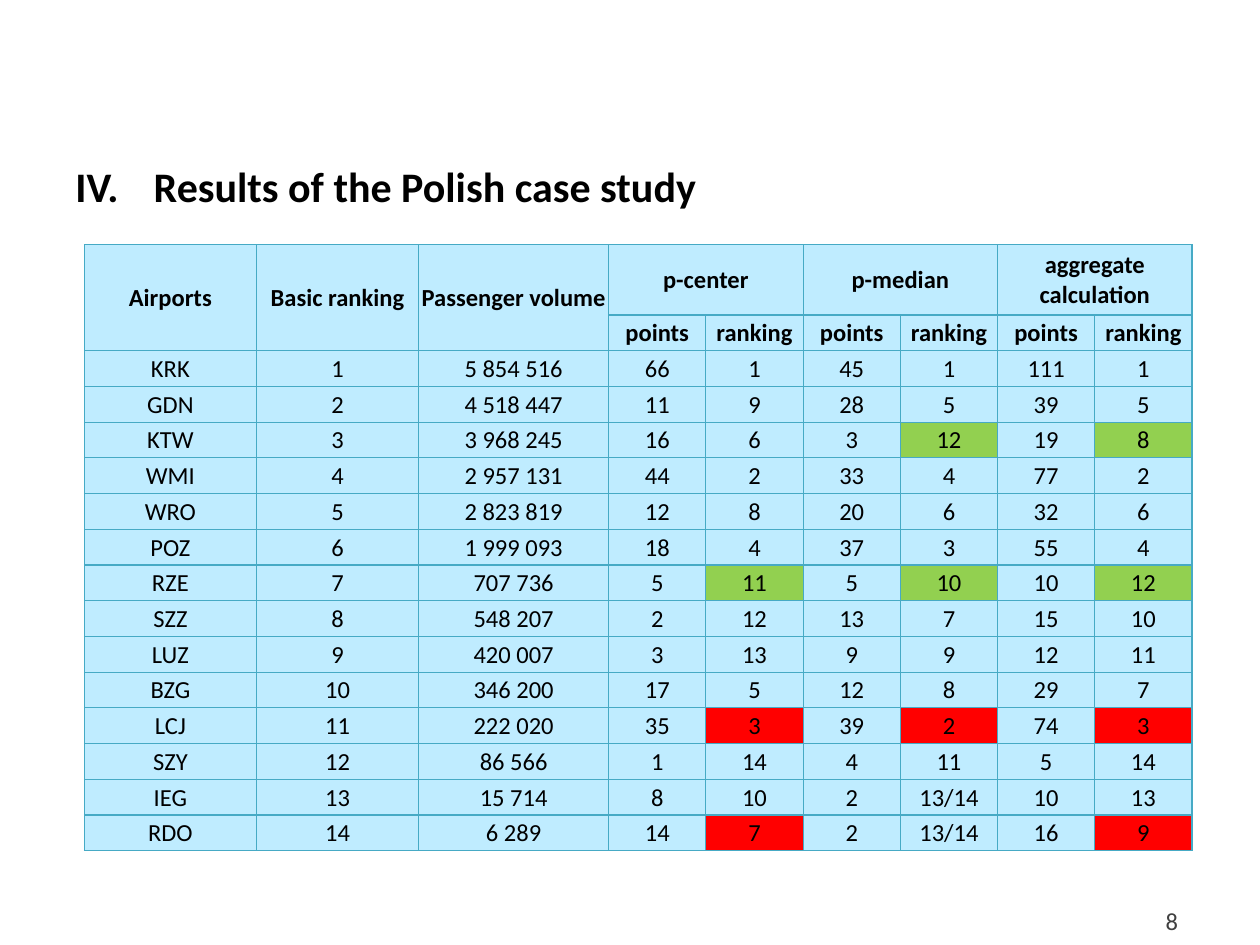
import pptx
import pptx.dml.color
import pptx.enum.text
import pptx.oxml.ns
import pptx.util
from lxml import etree

Cm = pptx.util.Cm
Pt = pptx.util.Pt
RGBColor = pptx.dml.color.RGBColor
Align = pptx.enum.text.PP_ALIGN
Anchor = pptx.enum.text.MSO_ANCHOR
qn = pptx.oxml.ns.qn

BLACK = RGBColor(0x00, 0x00, 0x00)
GREY = RGBColor(0x40, 0x40, 0x40)
PALE_BLUE = RGBColor(0xBF, 0xEC, 0xFF)
TEAL = RGBColor(0x46, 0xAA, 0xC5)
GREEN = RGBColor(0x92, 0xD0, 0x50)
RED = RGBColor(0xFF, 0x00, 0x00)

COLUMN_WIDTHS = [3.47, 3.27, 3.83] + [1.96] * 6
HEADER_HEIGHT, ROW_HEIGHT = 1.42, 0.72
HEADER_ROWS = 2
ROWS = [
    ["Airports", "Basic ranking", "Passenger volume",
     "p-center", "", "p-median", "", "aggregate calculation", ""],
    ["", "", ""] + ["points", "ranking"] * 3,
    ["KRK", "1", "5 854 516", "66", "1", "45", "1", "111", "1"],
    ["GDN", "2", "4 518 447", "11", "9", "28", "5", "39", "5"],
    ["KTW", "3", "3 968 245", "16", "6", "3", "12", "19", "8"],
    ["WMI", "4", "2 957 131", "44", "2", "33", "4", "77", "2"],
    ["WRO", "5", "2 823 819", "12", "8", "20", "6", "32", "6"],
    ["POZ", "6", "1 999 093", "18", "4", "37", "3", "55", "4"],
    ["RZE", "7", "707 736", "5", "11", "5", "10", "10", "12"],
    ["SZZ", "8", "548 207", "2", "12", "13", "7", "15", "10"],
    ["LUZ", "9", "420 007", "3", "13", "9", "9", "12", "11"],
    ["BZG", "10", "346 200", "17", "5", "12", "8", "29", "7"],
    ["LCJ", "11", "222 020", "35", "3", "39", "2", "74", "3"],
    ["SZY", "12", "86 566", "1", "14", "4", "11", "5", "14"],
    ["IEG", "13", "15 714", "8", "10", "2", "13/14", "10", "13"],
    ["RDO", "14", "6 289", "14", "7", "2", "13/14", "16", "9"],
]
# Highlighted ranking columns of each airport
HIGHLIGHTS = {
    "KTW": (GREEN, (6, 8)),
    "RZE": (GREEN, (4, 6, 8)),
    "LCJ": (RED, (4, 6, 8)),
    "RDO": (RED, (4, 8)),
}


class SlideBuilder:
    font = "Calibri"

    def __init__(self, page):
        self.page = page

    def add_span(self, para, text, size, color=BLACK, bold=False):
        span = para.add_run()
        span.text = text
        span.font.name = self.font
        span.font.size = Pt(size)
        span.font.bold = bold
        span.font.color.rgb = color

    def text_box(self, left, top, width, height, anchor=Anchor.TOP):
        box = self.page.shapes.add_textbox(Cm(left), Cm(top), Cm(width), Cm(height))
        box.text_frame.word_wrap = True
        box.text_frame.vertical_anchor = anchor
        return box.text_frame.paragraphs[0]

    def number_roman(self, para, start, indent):
        properties = para._p.get_or_add_pPr()
        properties.set("marL", str(Cm(indent)))
        properties.set("indent", str(-Cm(indent)))
        etree.SubElement(properties, qn("a:buAutoNum"),
                         type="romanUcPeriod", startAt=str(start))

    def border(self, cell):
        properties = cell._tc.get_or_add_tcPr()
        for side in ("a:lnL", "a:lnR", "a:lnT", "a:lnB"):
            line = etree.SubElement(properties, qn(side), w=str(Pt(0.75)))
            fill = etree.SubElement(line, qn("a:solidFill"))
            etree.SubElement(fill, qn("a:srgbClr"), val=str(TEAL))

    def fill_cell(self, cell, text, color, bold):
        self.border(cell)
        cell.fill.solid()
        cell.fill.fore_color.rgb = color
        cell.vertical_anchor = Anchor.MIDDLE
        cell.margin_left = cell.margin_right = cell.margin_top = Cm(0.02)
        cell.margin_bottom = 0
        para = cell.text_frame.paragraphs[0]
        para.alignment = Align.CENTER
        if text:
            self.add_span(para, text, 14, bold=bold)

    def table(self, left, top, rows, widths, heights):
        table = self.page.shapes.add_table(
            len(rows), len(widths), Cm(left), Cm(top),
            Cm(sum(widths)), Cm(sum(heights))).table
        table.first_row = table.horz_banding = False
        for column, width in zip(table.columns, widths):
            column.width = Cm(width)
        for row, height in zip(table.rows, heights):
            row.height = Cm(height)
        for r, texts in enumerate(rows):
            color, marked = HIGHLIGHTS.get(texts[0], (PALE_BLUE, ()))
            for c, text in enumerate(texts):
                self.fill_cell(table.cell(r, c), text,
                               color if c in marked else PALE_BLUE,
                               bold=r < HEADER_ROWS)
        return table


def main():
    deck = pptx.Presentation()
    deck.slide_width, deck.slide_height = Cm(25.4), Cm(19.05)
    page = deck.slides.add_slide(deck.slide_layouts[6])
    builder = SlideBuilder(page)

    # Title
    para = builder.text_box(1.27, 3.12, 22.86, 1.12)
    builder.number_roman(para, start=4, indent=1.58)
    builder.add_span(para, "Results of the Polish case study", 24, bold=True)

    # Page number
    para = builder.text_box(18.08, 18.14, 5.92, 0.84, Anchor.MIDDLE)
    para.alignment = Align.RIGHT
    builder.add_span(para, "8", 14, GREY)

    # Results table
    heights = [HEADER_HEIGHT] + [ROW_HEIGHT] * (len(ROWS) - 1)
    table = builder.table(1.7, 4.93, ROWS, COLUMN_WIDTHS, heights)
    for column in range(3):
        table.cell(0, column).merge(table.cell(1, column))
    for column in range(3, 9, 2):
        table.cell(0, column).merge(table.cell(0, column + 1))

    deck.save("out.pptx")


if __name__ == "__main__":
    main()
